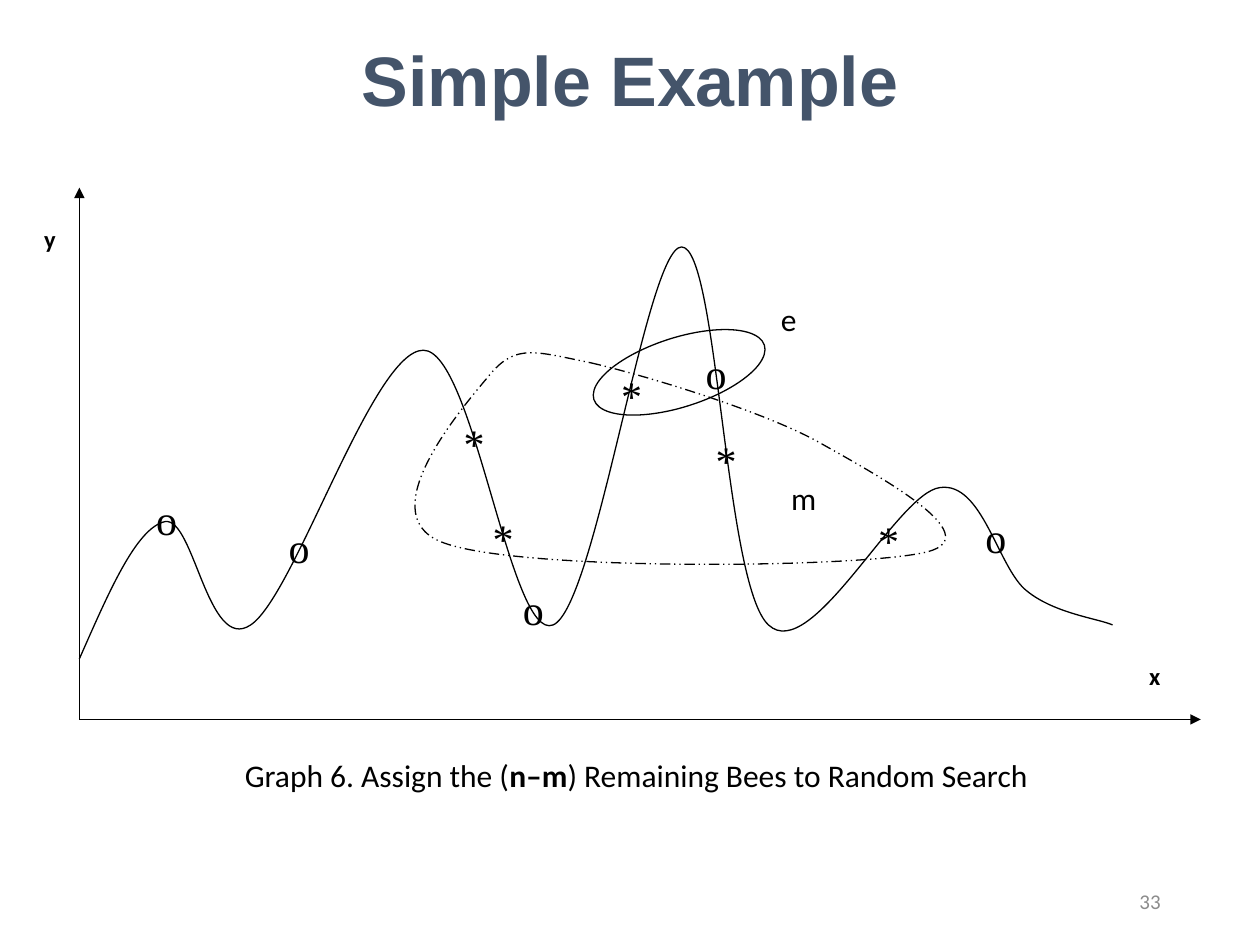
from lxml import etree
from pptx import Presentation
from pptx.dml.color import RGBColor
from pptx.enum.dml import MSO_LINE
from pptx.enum.shapes import MSO_CONNECTOR, MSO_SHAPE
from pptx.enum.text import MSO_ANCHOR, PP_ALIGN
from pptx.oxml.ns import qn
from pptx.util import Inches, Pt

UNIT = Inches(0.1)
BLACK = "000000"
LANDSCAPE = [
    (0, 37.4), (2.3, 32.2), (4.5, 27), (6.8, 26.5), (9.1, 26.1), (10.2, 37), (13.6, 34.7),
    (17.1, 32.4), (23.3, 12.9), (27.3, 12.9), (31.3, 12.9), (34.2, 36.1), (37.6, 34.7),
    (41, 33.3), (45, 4.7), (47.8, 4.7), (50.7, 4.7), (51.2, 31.5), (54.7, 34.7),
    (58.1, 37.9), (64.9, 24.2), (68.3, 23.8), (71.7, 23.3), (72.9, 30.2), (75.2, 32),
    (77.4, 33.8), (80.9, 34.2), (82, 34.7)]
SELECTED_REGION = [
    (40.6, 13.9), (44.9, 14.9), (54.2, 17.7), (58.7, 20.2), (63.1, 22.7), (72.3, 27.6),
    (67.3, 28.9), (62.3, 30.2), (34.5, 30.5), (28.7, 28.1), (23, 25.8), (30.7, 17.1),
    (32.7, 14.7), (34.7, 12.4), (36.2, 13), (40.6, 13.9)]
BEES = {
    "*": [(43.8, 15.2), (33.6, 26.6), (31.3, 19), (51.3, 20.4), (64.2, 26.7)],
    "o": [(6.9, 25.1), (50.5, 13.5), (72.7, 26.5), (36, 32.2), (17.4, 27.3)]}


def color(value):
    return RGBColor.from_string(value)


def grid(*values):
    return [round(v * UNIT) for v in values]


def add_run(p, text, size, font="Calibri", fill=BLACK, bold=False):
    r = p.add_run()
    r.text = text
    r.font.size = Pt(size)
    r.font.name = font
    r.font.bold = bold
    r.font.color.rgb = color(fill)


def add_text(s, box, runs, size, align=PP_ALIGN.LEFT, anchor=MSO_ANCHOR.TOP,
             inset=True, **style):
    tf = s.shapes.add_textbox(*grid(*box)).text_frame
    tf.word_wrap = True
    tf.vertical_anchor = anchor
    if not inset:
        tf.margin_left = tf.margin_top = tf.margin_right = tf.margin_bottom = 0
    p = tf.paragraphs[0]
    p.alignment = align
    for text, bold in runs:
        add_run(p, text, size, bold=bold, **style)


def draw_line(line):
    line.color.rgb = color(BLACK)
    line.width = Pt(0.75)


def outline(sp):
    sp.shadow.inherit = False
    sp.fill.background()
    draw_line(sp.line)


def add_curve(s, box, points, closed=False):
    left, top = box[:2]
    spots = [grid(left + x, top + y) for x, y in points]
    builder = s.shapes.build_freeform(*spots[0])
    builder.add_line_segments(spots[1:], close=closed)
    sp = builder.convert_to_shape()
    steps = list(sp.element.iter(qn("a:lnTo")))
    for i in range(0, len(points) - 1, 3):
        bezier = etree.Element(qn("a:cubicBezTo"))
        steps[i].addprevious(bezier)
        for step in steps[i:i + 3]:
            bezier.append(step[0])
            step.getparent().remove(step)
    outline(sp)
    return sp


def add_axis(s, start, end):
    axis = s.shapes.add_connector(MSO_CONNECTOR.STRAIGHT, *grid(*start, *end))
    draw_line(axis.line)
    properties = axis.element.spPr
    etree.SubElement(properties.find(qn("a:ln")), qn("a:tailEnd"), type="triangle")
    etree.SubElement(properties, qn("a:effectLst"))


def add_axes(s, box):
    left, top, width, height = box
    origin = (left, top + height)
    add_axis(s, origin, (left, top))
    add_axis(s, origin, (left + width, top + height))
    for name, x, y in (("x", 84.9, 37.6), ("y", -2.8, 2.9)):
        add_text(s, (left + x, top + y, 4.7, 4.7), [(name, True)], 14, inset=False)


def add_bees(s, box):
    left, top = box[:2]
    side = 1.6
    for mark, centres in BEES.items():
        for x, y in centres:
            spot = (left + x - side / 2, top + y - side / 2, side, side)
            add_text(s, spot, [(mark, False)], 24, PP_ALIGN.CENTER, inset=False,
                     font="Times New Roman")


def add_plot(s, box):
    left, top = box[:2]
    add_axes(s, box)
    add_curve(s, box, LANDSCAPE)
    add_bees(s, box)
    region = add_curve(s, box, SELECTED_REGION, closed=True)
    region.line.dash_style = MSO_LINE.DASH_DOT_DOT
    elite = s.shapes.add_shape(MSO_SHAPE.OVAL, *grid(left + 40.5, top + 11.9, 14.2, 5.5))
    elite.rotation = 342.3
    outline(elite)
    for name, x, y in (("m", 55.5, 22.6), ("e", 54.7, 8.4)):
        add_text(s, (left + x, top + y, 6.3, 4), [(name, False)], 18)


def add_title(s, box):
    title = s.shapes.title
    title.left, title.top, title.width, title.height = grid(*box)
    tf = title.text_frame
    tf.vertical_anchor = MSO_ANCHOR.MIDDLE
    p = tf.paragraphs[0]
    p.alignment = PP_ALIGN.CENTER
    add_run(p, "Simple Example", 40, "Arial", "44546A", True)


def main():
    prs = Presentation()
    prs.slide_width, prs.slide_height = grid(100, 75)
    s = prs.slides.add_slide(prs.slide_layouts[5])
    add_title(s, (0, 0, 100, 12.5))
    add_plot(s, (6.3, 14.9, 89, 42.2))
    caption = [("Graph 6. Assign the (", False), ("n–m", True),
               (") Remaining Bees to Random Search", False)]
    add_text(s, (14.4, 59.5, 72.2, 4), caption, 18, PP_ALIGN.CENTER, MSO_ANCHOR.MIDDLE)
    add_text(s, (70.6, 69.5, 22.5, 4), [("33", False)], 12, PP_ALIGN.RIGHT,
             MSO_ANCHOR.MIDDLE, fill="8C8C8C")
    prs.save("out.pptx")


if __name__ == "__main__":
    main()
